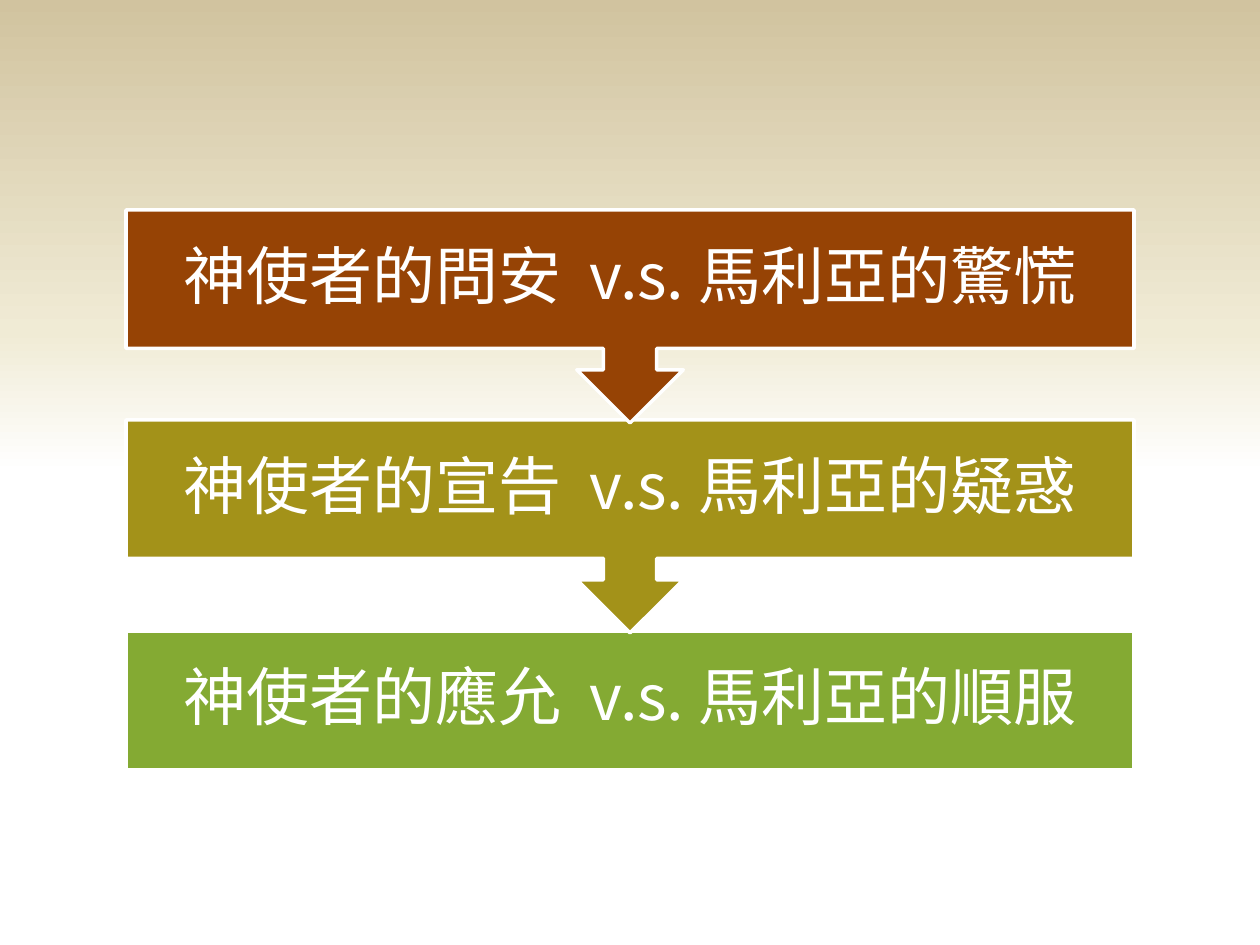
from copy import deepcopy
from pptx import Presentation
from pptx.dml.color import RGBColor
from pptx.enum.shapes import MSO_SHAPE as SHAPE
from pptx.enum.text import MSO_ANCHOR as ANCHOR, PP_ALIGN as ALIGN
from pptx.oxml.ns import qn
from pptx.util import Pt

PX = 914400 // 126
FONT = "Noto Sans CJK SC"


def rgb(value):
    return RGBColor.from_string(value)


prs = Presentation()
prs.slide_width, prs.slide_height = 1260 * PX, 945 * PX
s = prs.slides.add_slide(prs.slide_layouts[6])

fill = s.background.fill
fill.gradient()
fill.gradient_angle = 90
first = fill.gradient_stops[0]._gs
first.addnext(deepcopy(first))
stops = [(0.5, "FFFFFF"), (0.65, "F0EBD5"), (1, "D1C39F")]
for stop, (position, color) in zip(fill.gradient_stops, stops):
    stop.position = position
    stop.color.rgb = rgb(color)

LEFT, TOP, WIDTH, PITCH = 126, 210, 1008, 421 / 2
BOX_H, CALLOUT_H, INSET = 139, 213, 35
steps = [
    ("神使者的問安  v.s. 馬利亞的驚慌", "964305", SHAPE.UP_ARROW_CALLOUT, CALLOUT_H),
    ("神使者的宣告  v.s. 馬利亞的疑惑", "A39219", SHAPE.UP_ARROW_CALLOUT, CALLOUT_H),
    ("神使者的應允  v.s. 馬利亞的順服", "84AA33", SHAPE.RECTANGLE, BOX_H),
]
frame_format = {
    "word_wrap": True,
    "vertical_anchor": ANCHOR.MIDDLE,
    "margin_left": INSET * PX,
    "margin_right": INSET * PX,
    "margin_top": INSET * PX,
    "margin_bottom": INSET * PX,
}
para_format = {"alignment": ALIGN.CENTER, "line_spacing": 0.9, "space_after": Pt(12.6)}
font_format = {"name": FONT, "size": Pt(36)}

for i, (text, color, kind, height) in reversed(list(enumerate(steps))):
    top = round(TOP + i * PITCH)
    sp = s.shapes.add_shape(kind, LEFT * PX, top * PX, WIDTH * PX, height * PX)
    sp.shadow.inherit = False
    sp.fill.solid()
    sp.fill.fore_color.rgb = rgb(color)
    sp.line.color.rgb = rgb("FFFFFF")
    sp.line.width = Pt(2)
    if kind == SHAPE.UP_ARROW_CALLOUT:
        sp.rotation = 180

    tf = s.shapes.add_textbox(LEFT * PX, top * PX, WIDTH * PX, BOX_H * PX).text_frame
    p = tf.paragraphs[0]
    r = p.add_run()
    r.text = text
    for target, values in ((tf, frame_format), (p, para_format), (r.font, font_format)):
        for name, value in values.items():
            setattr(target, name, value)
    r.font.color.rgb = rgb("FFFFFF")
    ea = r._r.rPr.makeelement(qn("a:ea"), {"typeface": FONT})
    r._r.rPr.find(qn("a:latin")).addnext(ea)

prs.save("out.pptx")
